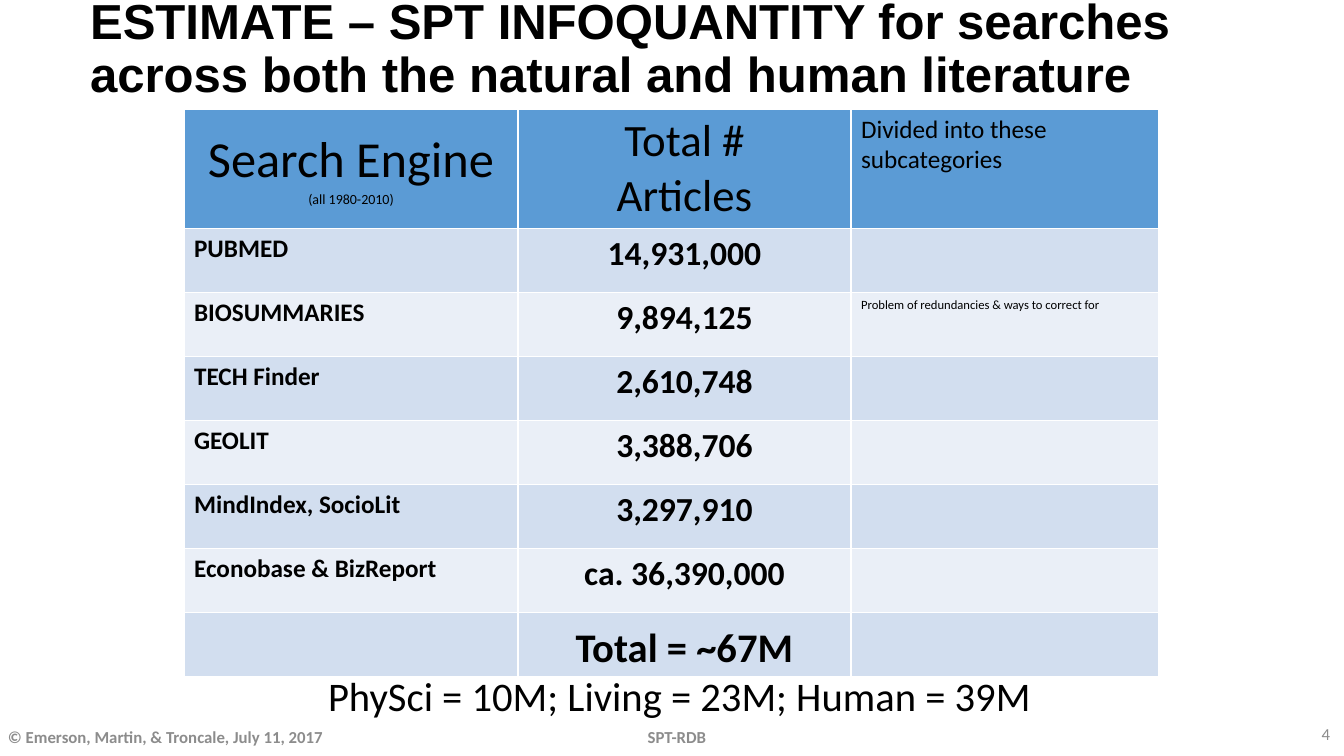
from lxml import etree
from pptx import Presentation
from pptx import util as u
from pptx.dml.color import RGBColor
from pptx.enum import text as t
from pptx.oxml.ns import qn

BLACK = RGBColor(0, 0, 0)
GREY = RGBColor(0x8C, 0x8C, 0x8C)
WHITE = RGBColor(0xFF, 0xFF, 0xFF)
HEAD = RGBColor(0x5B, 0x9B, 0xD5)
BANDS = RGBColor(0xD2, 0xDE, 0xEF), RGBColor(0xEA, 0xEF, 0xF7)
LEFT, MID, RIGHT = t.PP_ALIGN.LEFT, t.PP_ALIGN.CENTER, t.PP_ALIGN.RIGHT
TOP, CENTRE = t.MSO_ANCHOR.TOP, t.MSO_ANCHOR.MIDDLE

TITLE = "ESTIMATE – SPT INFOQUANTITY for searches across both the natural and human literature"
ENGINE, YEARS = "Search Engine ", "(all 1980-2010)"
ROWS = [
    ("", "Total #\nArticles", "Divided into these subcategories"),
    ("PUBMED", "14,931,000", ""),
    ("BIOSUMMARIES", "9,894,125", "Problem of redundancies & ways to correct for"),
    ("TECH Finder", "2,610,748", ""),
    ("GEOLIT", "3,388,706", ""),
    ("MindIndex, SocioLit", "3,297,910", ""),
    ("Econobase & BizReport", "ca. 36,390,000", ""),
    ("", "", ""),
]
HEADS = [(36, False, LEFT), (32, False, MID), (18, False, LEFT)]
CELLS = [(18, True, LEFT), (24, True, MID), (9, False, LEFT)]
COLS = [334, 333, 308]
HIGH, LOW = 117, 64
SUMS = "Total = ~67M\nPhySci = 10M; Living = 23M; Human = 39M "
FOOT = [
    ("SPT-RDB", (446, 719, 462, 35), True, MID),
    ("4", (1295, 714, 45, 40), False, RIGHT),
    ("© Emerson, Martin, & Troncale, July 11, 2017", (-2, 720, 350, 34), True, LEFT),
]


def px(n):
    """Turn pixels into EMU."""
    return u.Emu(round(n * 914400 / 100.8))


def style(frame, size, bold, align, color=BLACK, face="Calibri"):
    """Format every paragraph and run of a frame."""
    for para in frame.paragraphs:
        para.alignment = align
        for run in para.runs:
            font = run.font
            font.size, font.bold, font.name = u.Pt(size), bold, face
            font.color.rgb = color


def label(slide, words, box, anchor=TOP):
    """Add a text box and return its frame."""
    frame = slide.shapes.add_textbox(*map(px, box)).text_frame
    frame.word_wrap = True
    frame.vertical_anchor = anchor
    frame.text = words
    return frame


def edge(cell):
    """Draw thin white borders around a cell."""
    props = cell._tc.get_or_add_tcPr()
    for n, side in enumerate(("lnL", "lnR", "lnT", "lnB")):
        line = etree.Element(qn("a:" + side), w="12700")
        fill = etree.SubElement(line, qn("a:solidFill"))
        etree.SubElement(fill, qn("a:srgbClr"), val=str(WHITE))
        props.insert(n, line)


def grid(slide):
    """Build the table of search engines."""
    highs = [HIGH] + [LOW] * (len(ROWS) - 1)
    box = map(px, (184, 109, sum(COLS), sum(highs)))
    table = slide.shapes.add_table(len(ROWS), len(COLS), *box).table
    table.first_row = table.horz_banding = False
    for col, wide in zip(table.columns, COLS):
        col.width = px(wide)
    for r, (row, high) in enumerate(zip(ROWS, highs)):
        table.rows[r].height = px(high)
        for c, words in enumerate(row):
            cell = table.cell(r, c)
            cell.text_frame.text = words
            style(cell.text_frame, *(CELLS if r else HEADS)[c])
            cell.fill.solid()
            cell.fill.fore_color.rgb = BANDS[(r - 1) % 2] if r else HEAD
            edge(cell)
    first = table.cell(0, 0)
    first.vertical_anchor = CENTRE
    para = first.text_frame.paragraphs[0]
    for words in (ENGINE, YEARS):
        para.add_run().text = words
    style(first.text_frame, 36, False, MID)
    para.runs[1].font.size = u.Pt(10)


def main():
    """Build and save the slide."""
    deck = Presentation()
    deck.slide_width, deck.slide_height = px(1344), px(756)
    slide = deck.slides.add_slide(deck.slide_layouts[5])

    grid(slide)

    sums = label(slide, SUMS, (235, 617, 899, 112))
    style(sums, 29, True, MID)
    sums.paragraphs[1].runs[0].font.bold = False

    title = slide.shapes.title
    title.left, title.top, title.width, title.height = map(px, (80, 0, 1141, 101))
    frame = title.text_frame
    frame.text = TITLE
    frame.word_wrap = True
    frame.auto_size = t.MSO_AUTO_SIZE.NONE
    frame.vertical_anchor = CENTRE
    frame.paragraphs[0].line_spacing = 0.9
    style(frame, 35.1, True, LEFT, face="Arial")

    for words, box, bold, align in FOOT:
        style(label(slide, words, box, CENTRE), 12, bold, align, GREY)

    deck.save("out.pptx")


if __name__ == "__main__":
    main()
